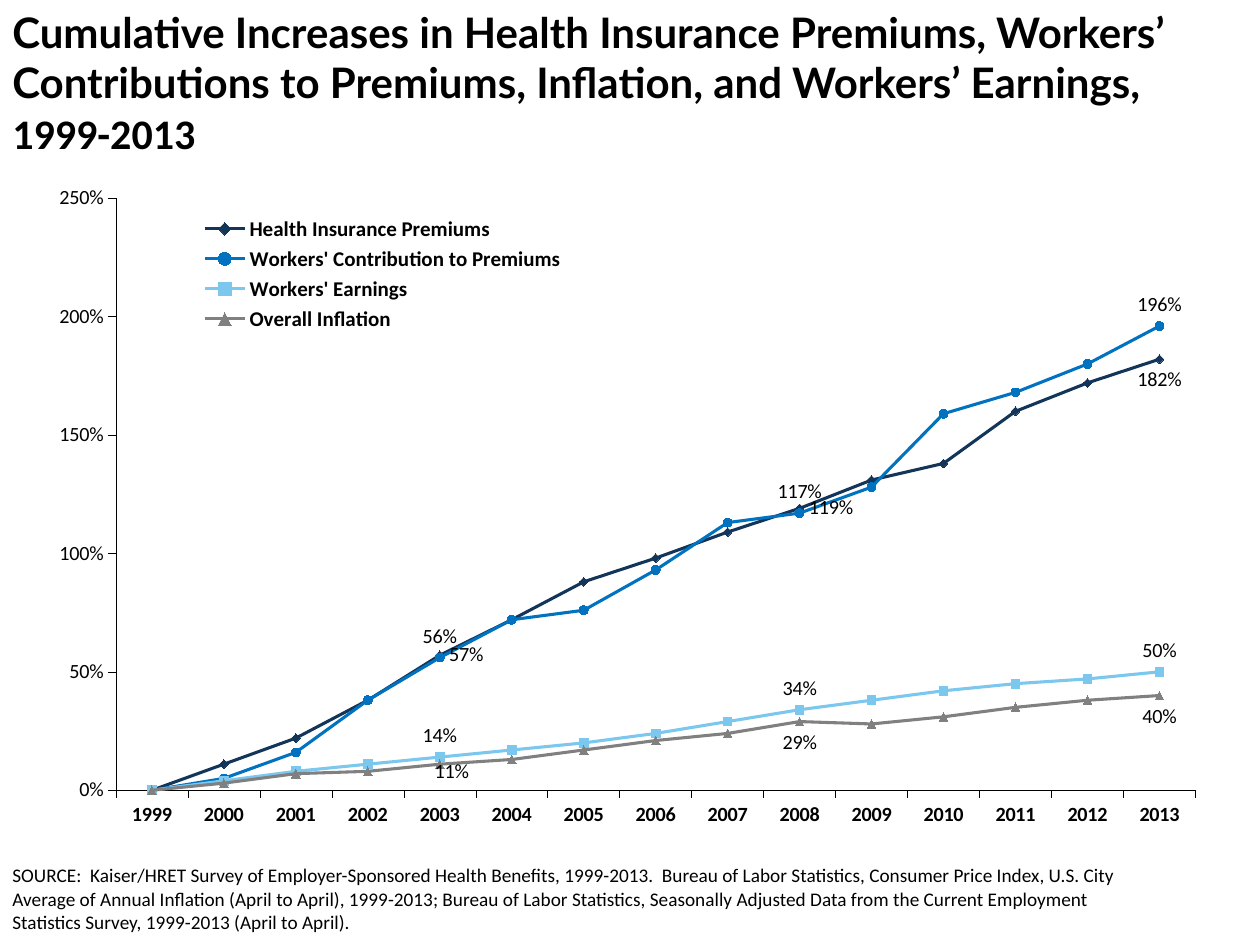
"""Build a slide with a line chart of premium, wage and price growth."""
from lxml import etree
from pptx import Presentation
from pptx.chart.data import CategoryChartData
from pptx.dml.color import RGBColor
from pptx.enum.chart import (
    XL_CHART_TYPE, XL_LABEL_POSITION, XL_LEGEND_POSITION, XL_MARKER_STYLE, XL_TICK_MARK)
from pptx.util import Pt

BLACK = RGBColor(0x00, 0x00, 0x00)
NAVY = RGBColor(0x13, 0x35, 0x59)
BLUE = RGBColor(0x00, 0x72, 0xC0)
SKY = RGBColor(0x7B, 0xC7, 0xED)
GRAY = RGBColor(0x80, 0x80, 0x80)
LINES = XL_CHART_TYPE.LINE_MARKERS
ABOVE = XL_LABEL_POSITION.ABOVE
BELOW = XL_LABEL_POSITION.BELOW
RIGHT = XL_LABEL_POSITION.RIGHT
BOTTOM = XL_LEGEND_POSITION.BOTTOM
DIAMOND = XL_MARKER_STYLE.DIAMOND
CIRCLE = XL_MARKER_STYLE.CIRCLE
SQUARE = XL_MARKER_STYLE.SQUARE
TRIANGLE = XL_MARKER_STYLE.TRIANGLE
OUTSIDE = XL_TICK_MARK.OUTSIDE
NONE = XL_TICK_MARK.NONE
C = "{http://schemas.openxmlformats.org/drawingml/2006/chart}"

TITLE = [
    ("Cumulative Increases in Health Insurance Premiums, Workers’ "
     "Contributions to Premiums, Inflation, and Workers’ Earnings, ", "Lato"),
    ("1999-2013", "Calibri"),
]
SOURCE = [
    ("SOURCE:  Kaiser/HRET Survey of Employer-Sponsored Health Benefits, 1999-2013.  "
     "Bureau of Labor Statistics, Consumer Price Index, U.S. City Average of Annual "
     "Inflation (April to April), 1999-2013; Bureau of Labor Statistics, Seasonally "
     "Adjusted Data from the Current Employment Statistics Survey, 1999-2013 "
     "(April to April).", "Calibri"),
]
SERIES = [
    ("Health Insurance Premiums", NAVY, DIAMOND, {4: RIGHT, 9: RIGHT, 14: BELOW},
     [0, 0.11, 0.22, 0.38, 0.57, 0.72, 0.88, 0.98, 1.09, 1.19, 1.31, 1.38, 1.60, 1.72, 1.82]),
    ("Workers' Contribution to Premiums", BLUE, CIRCLE, dict.fromkeys((4, 9, 14), ABOVE),
     [0, 0.05, 0.16, 0.38, 0.56, 0.72, 0.76, 0.93, 1.13, 1.17, 1.28, 1.59, 1.68, 1.80, 1.96]),
    ("Workers' Earnings", SKY, SQUARE, dict.fromkeys((4, 9, 14), ABOVE),
     [0, 0.04, 0.08, 0.11, 0.14, 0.17, 0.20, 0.24, 0.29, 0.34, 0.38, 0.42, 0.45, 0.47, 0.50]),
    ("Overall Inflation", GRAY, TRIANGLE, dict.fromkeys((4, 9, 14), BELOW),
     [0, 0.03, 0.07, 0.08, 0.11, 0.13, 0.17, 0.21, 0.24, 0.29, 0.28, 0.31, 0.35, 0.38, 0.40]),
]


def write(slide, box, runs, size, bold):
    frame = slide.shapes.add_textbox(*map(Pt, box)).text_frame
    frame.word_wrap = True
    para = frame.paragraphs[0]
    para.font.size = Pt(size)
    para.font.bold = bold
    para.font.color.rgb = BLACK
    if len(runs) == 1:
        para.font.name = runs[0][1]
    for text, face in runs:
        run = para.add_run()
        run.text = text
        if len(runs) > 1:
            run.font.name = face


def place(node, spot, **parts):
    old = node.find(C + "layout")
    if old is not None:
        node.remove(old)
    layout = etree.Element(C + "layout")
    manual = etree.SubElement(layout, C + "manualLayout")
    for tag, val in parts.items():
        etree.SubElement(manual, C + tag, val=str(val))
    node.insert(spot, layout)


prs = Presentation()
prs.slide_width, prs.slide_height = Pt(720), Pt(540)
slide = prs.slides.add_slide(prs.slide_layouts[6])
write(slide, (0, 0, 678, 68), TITLE, 24, True)

data = CategoryChartData(number_format="0%")
data.categories = [str(year) for year in range(1999, 2014)]
for name, _, _, _, vals in SERIES:
    data.add_series(name, vals)
chart = slide.shapes.add_chart(LINES, Pt(12), Pt(102), Pt(678), Pt(376), data).chart
chart.has_title = False
chart.font.name = "Calibri"
chart.font.size = Pt(11.5)
chart.font.color.rgb = BLACK

for axis in (chart.category_axis, chart.value_axis):
    axis.has_major_gridlines = False
    axis.major_tick_mark = OUTSIDE
    axis.minor_tick_mark = NONE
    axis.format.line.color.rgb = BLACK
    axis.format.line.width = Pt(0.25)
chart.category_axis.tick_labels.font.bold = True
scale = chart.value_axis
scale.minimum_scale, scale.maximum_scale, scale.major_unit = 0, 2.5, 0.5
scale.tick_labels.number_format = "0%"
scale.tick_labels.number_format_is_linked = False

plot = chart.plots[0]
plot.vary_by_categories = False
for line, (_, color, style, spots, _) in zip(plot.series, SERIES):
    line.smooth = False
    line.format.line.color.rgb = color
    line.format.line.width = Pt(1.75)
    mark = line.marker
    mark.style = style
    mark.size = 5
    mark.format.fill.solid()
    mark.format.fill.fore_color.rgb = color
    mark.format.line.color.rgb = color
    line.data_labels.show_value = False
    for i, pos in spots.items():
        line.points[i].data_label.position = pos

chart.has_legend = True
key = chart.legend
key.position = BOTTOM
key.include_in_layout = False
key.font.size = Pt(12)
key.font.bold = True

root = chart.element
place(root.find(f".//{C}plotArea"), 0, layoutTarget="inner", xMode="edge", yMode="edge",
      x=0.08, y=0.03, w=0.91, h=0.9)
place(root.find(f".//{C}legend"), 1, xMode="edge", yMode="edge",
      x=0.15, y=0.05, w=0.31, h=0.19)
place(root.findall(f".//{C}ser")[3].find(f".//{C}dLbl"), 1, x=0.01, y=-0.02)

write(slide, (0, 490, 648, 47), SOURCE, 11, False)
prs.save("out.pptx")
